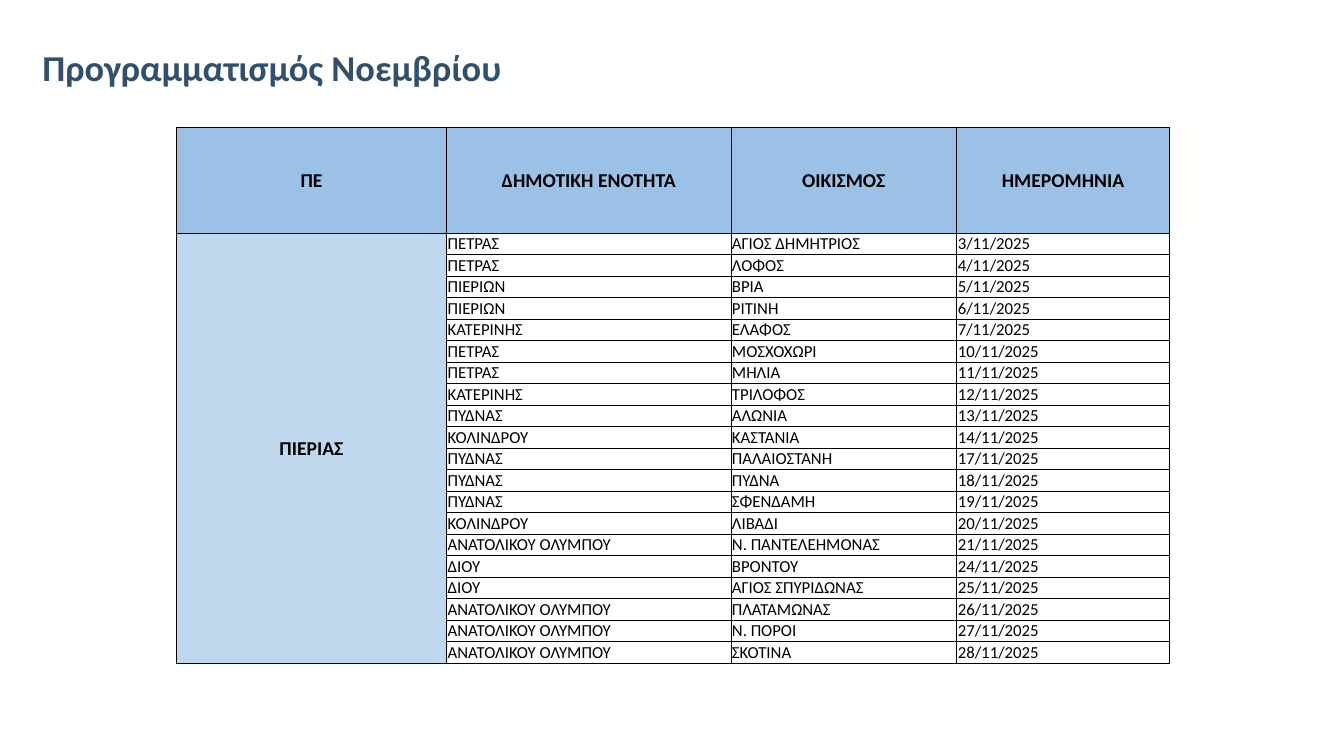
from lxml import etree
from pptx import Presentation
from pptx.dml.color import RGBColor
from pptx.enum.text import MSO_ANCHOR, PP_ALIGN
from pptx.oxml.ns import qn
from pptx.util import Inches, Pt

LEFT, CENTER = PP_ALIGN.LEFT, PP_ALIGN.CENTER
MIDDLE, BOTTOM = MSO_ANCHOR.MIDDLE, MSO_ANCHOR.BOTTOM

# Content
TITLE = "Προγραμματισμός Νοεμβρίου"
HEADERS = ["ΠΕ", "ΔΗΜΟΤΙΚΗ ΕΝΟΤΗΤΑ", "ΟΙΚΙΣΜΟΣ", "ΗΜΕΡΟΜΗΝΙΑ"]
REGION = "ΠΙΕΡΙΑΣ"
MONTH = "11/2025"
VISITS = [  # municipal unit, settlement, day of the month
    ("ΠΕΤΡΑΣ", "ΑΓΙΟΣ ΔΗΜΗΤΡΙΟΣ", 3),
    ("ΠΕΤΡΑΣ", "ΛΟΦΟΣ", 4),
    ("ΠΙΕΡΙΩΝ", "ΒΡΙΑ", 5),
    ("ΠΙΕΡΙΩΝ", "ΡΙΤΙΝΗ", 6),
    ("ΚΑΤΕΡΙΝΗΣ", "ΕΛΑΦΟΣ", 7),
    ("ΠΕΤΡΑΣ", "ΜΟΣΧΟΧΩΡΙ", 10),
    ("ΠΕΤΡΑΣ", "ΜΗΛΙΑ", 11),
    ("ΚΑΤΕΡΙΝΗΣ", "ΤΡΙΛΟΦΟΣ", 12),
    ("ΠΥΔΝΑΣ", "ΑΛΩΝΙΑ", 13),
    ("ΚΟΛΙΝΔΡΟΥ", "ΚΑΣΤΑΝΙΑ", 14),
    ("ΠΥΔΝΑΣ", "ΠΑΛΑΙΟΣΤΑΝΗ", 17),
    ("ΠΥΔΝΑΣ", "ΠΥΔΝΑ", 18),
    ("ΠΥΔΝΑΣ", "ΣΦΕΝΔΑΜΗ", 19),
    ("ΚΟΛΙΝΔΡΟΥ", "ΛΙΒΑΔΙ", 20),
    ("ΑΝΑΤΟΛΙΚΟΥ ΟΛΥΜΠΟΥ", "Ν. ΠΑΝΤΕΛΕΗΜΟΝΑΣ", 21),
    ("ΔΙΟΥ", "ΒΡΟΝΤΟΥ", 24),
    ("ΔΙΟΥ", "ΑΓΙΟΣ ΣΠΥΡΙΔΩΝΑΣ", 25),
    ("ΑΝΑΤΟΛΙΚΟΥ ΟΛΥΜΠΟΥ", "ΠΛΑΤΑΜΩΝΑΣ", 26),
    ("ΑΝΑΤΟΛΙΚΟΥ ΟΛΥΜΠΟΥ", "Ν. ΠΟΡΟΙ", 27),
    ("ΑΝΑΤΟΛΙΚΟΥ ΟΛΥΜΠΟΥ", "ΣΚΟΤΙΝΑ", 28),
]

# Layout and look
COLUMN_WIDTHS = [2.68, 2.82, 2.24, 2.11]
HEADER_HEIGHT, VISIT_HEIGHT = 1.05, 0.19
FONT = "Calibri"
TITLE_COLOR, BLACK = "31506D", "000000"
HEADER_FILL, REGION_FILL = "9BC2E6", "C0D8ED"


def color(hex_code):
    return RGBColor.from_string(hex_code)


def style_paragraph(paragraph, size, bold, hex_code, align):
    paragraph.alignment = align
    font = paragraph.font
    font.name, font.size, font.bold = FONT, Pt(size), bold
    font.color.rgb = color(hex_code)


def add_borders(cell):
    properties = cell._tc.get_or_add_tcPr()
    for side in ("a:lnL", "a:lnR", "a:lnT", "a:lnB"):
        line = etree.SubElement(properties, qn(side), w=str(Pt(0.5)))
        fill = etree.SubElement(line, qn("a:solidFill"))
        etree.SubElement(fill, qn("a:srgbClr"), val=BLACK)


def format_cell(cell, text, fill=None):
    """Filled cells are headings: bold, larger and centred."""
    heading = fill is not None
    cell.text = text
    cell.vertical_anchor = MIDDLE
    cell.margin_left = cell.margin_right = cell.margin_top = Inches(0.01)
    cell.margin_bottom = 0
    style_paragraph(cell.text_frame.paragraphs[0], 14 if heading else 12,
                    heading, BLACK, CENTER if heading else LEFT)
    add_borders(cell)
    if heading:
        cell.fill.solid()
        cell.fill.fore_color.rgb = color(fill)
    else:
        cell.fill.background()


prs = Presentation()
prs.slide_width, prs.slide_height = Inches(13.33), Inches(7.5)
slide = prs.slides.add_slide(prs.slide_layouts[5])

# Title
title = slide.shapes.title
title.left, title.top = Inches(0.3), Inches(0.21)
title.width, title.height = Inches(12.4), Inches(0.73)
title.text = TITLE
title_frame = title.text_frame
title_frame.vertical_anchor = BOTTOM
title_frame.margin_left = Inches(0.12)
title_frame.paragraphs[0].line_spacing = 0.9
style_paragraph(title_frame.paragraphs[0], 26, True, TITLE_COLOR, LEFT)

# Schedule table
row_heights = [HEADER_HEIGHT] + [VISIT_HEIGHT] * len(VISITS)
schedule = slide.shapes.add_table(
    len(row_heights), len(HEADERS), Inches(1.75), Inches(1.26),
    Inches(sum(COLUMN_WIDTHS)), Inches(sum(row_heights))).table
schedule.first_row = schedule.horz_banding = False
for column, width in zip(schedule.columns, COLUMN_WIDTHS):
    column.width = Inches(width)
for row, height in zip(schedule.rows, row_heights):
    row.height = Inches(height)

for col, header in enumerate(HEADERS):
    format_cell(schedule.cell(0, col), header, HEADER_FILL)

# One row per visit, with the region spanning them all
for row, (unit, settlement, day) in enumerate(VISITS, start=1):
    format_cell(schedule.cell(row, 0), REGION if row == 1 else "", REGION_FILL)
    for col, text in enumerate((unit, settlement, f"{day}/{MONTH}"), start=1):
        format_cell(schedule.cell(row, col), text)
schedule.cell(1, 0).merge(schedule.cell(len(VISITS), 0))

prs.save("out.pptx")
